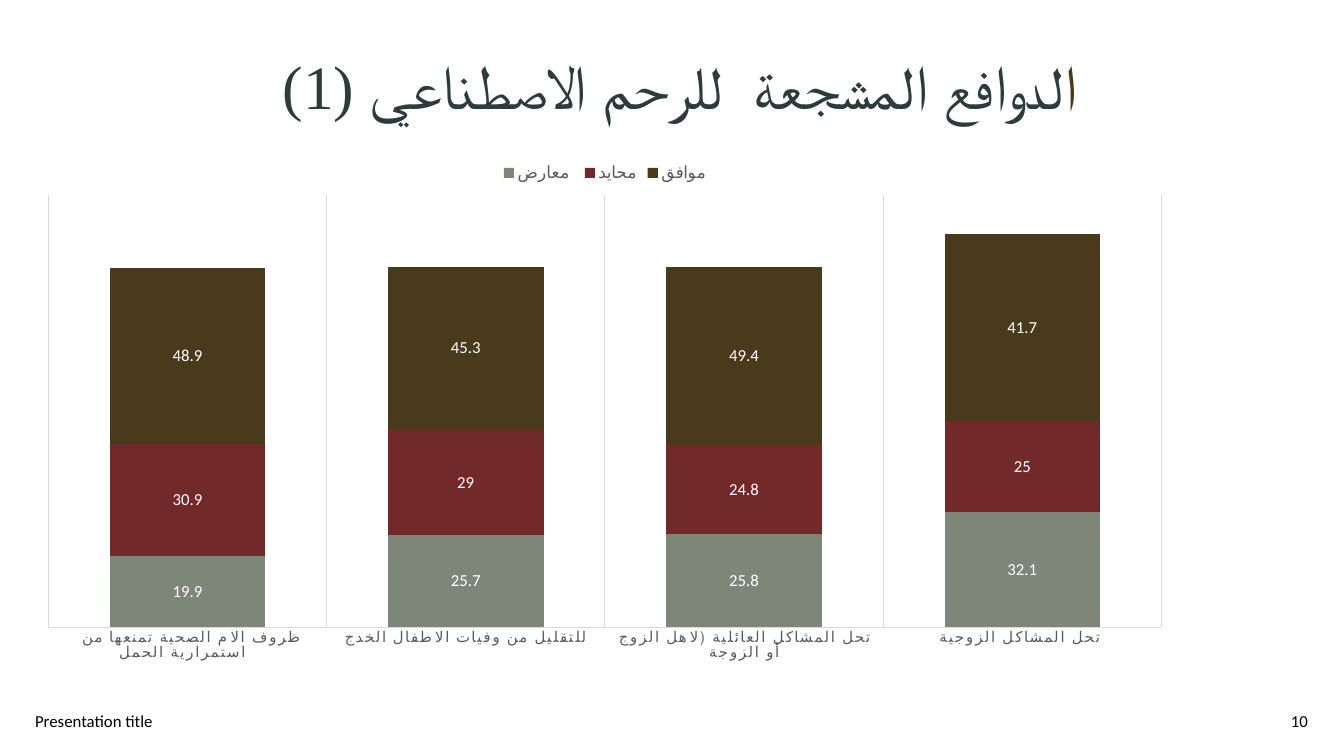
from dataclasses import dataclass

from lxml.etree import SubElement
from pptx import Presentation
from pptx.chart.chart import Chart
from pptx.chart.data import CategoryChartData
from pptx.dml.color import RGBColor
from pptx.enum.chart import XL_CHART_TYPE as ChartType
from pptx.enum.chart import XL_LABEL_POSITION as LabelPosition
from pptx.enum.chart import XL_LEGEND_POSITION as LegendPosition
from pptx.enum.chart import XL_TICK_LABEL_POSITION as TickLabels
from pptx.enum.chart import XL_TICK_MARK as TickMark
from pptx.enum.text import MSO_ANCHOR as Anchor
from pptx.enum.text import PP_ALIGN as Align
from pptx.oxml.ns import qn
from pptx.slide import Slide
from pptx.text.text import Font
from pptx.util import Inches, Pt

COLORS = {
    "brown": "4A3A1C",
    "red": "72292A",
    "sage": "7E8679",
    "title": "2C3C3A",
    "label": "595959",
    "grid": "D9D9D9",
    "black": "000000",
    "white": "FFFFFF",
}


@dataclass
class Answer:
    name: str
    values: tuple[float, ...]
    color: str
    shown: dict[int, str]  # label wording that differs from the value


@dataclass
class Note:
    text: str
    left: float
    width: float
    align: Align


MOTIVES = (
    " ظروف الام الصحية تمنعها من استمرارية الحمل  ",
    "للتقليل من وفيات الاطفال الخدج",
    "تحل المشاكل العائلية (لاهل الزوج أو الزوجة",
    "تحل المشاكل الزوجية ",
)
ANSWERS = (
    Answer("معارض ", (19.9, 25.7, 25.8, 32.1), "sage", {}),
    Answer("محايد", (30.9, 29.1, 24.8, 25), "red", {1: "29"}),
    Answer("موافق", (48.9, 45.3, 49.4, 52), "brown", {3: "41.7"}),
)
TITLE_PARTS = (("ا", "brown"), ("لدوافع المشجعة  للرحم الاصطناعي (1) ", "title"))
NOTES = (
    Note("Presentation title", 0.25, 4.5, Align.LEFT),
    Note("10", 10.07, 3, Align.RIGHT),
)
PLOT_AREA = {"x": 0.02, "y": 0.08, "w": 0.96, "h": 0.83}


def style_font(font: Font, size: float, color: str, name: str = "Calibri") -> None:
    for key, value in {"size": Pt(size), "name": name, "bold": False}.items():
        setattr(font, key, value)
    font.color.rgb = RGBColor.from_string(COLORS[color])


def fill_title(slide: Slide) -> None:
    title = slide.shapes.title
    place = {"left": 0.92, "top": 0.42, "width": 11.5, "height": 0.94}
    for key, value in place.items():
        setattr(title, key, Inches(value))
    title.text_frame.vertical_anchor = Anchor.MIDDLE
    para = title.text_frame.paragraphs[0]
    para.alignment = Align.CENTER
    para.line_spacing = 0.9
    para._p.get_or_add_pPr().set("rtl", "1")
    for text, color in TITLE_PARTS:
        span = para.add_run()
        span.text = text
        style_font(span.font, 44, color, "Times New Roman")
        complex_font = SubElement(span.font._element, qn("a:cs"))
        complex_font.set("typeface", "Times New Roman")


def add_note(slide: Slide, note: Note) -> None:
    box = slide.shapes.add_textbox(
        Inches(note.left), Inches(6.95), Inches(note.width), Inches(0.4)
    )
    box.text_frame.word_wrap = True
    box.text_frame.vertical_anchor = Anchor.MIDDLE
    para = box.text_frame.paragraphs[0]
    para.alignment = note.align
    span = para.add_run()
    span.text = note.text
    style_font(span.font, 12, "black")


def fix_plot_area(chart: Chart) -> None:
    """Pin the inner plot area to fractions of the chart frame."""
    plot_area = chart._chartSpace.chart.plotArea
    for old in plot_area.findall(qn("c:layout")):
        plot_area.remove(old)
    layout = SubElement(plot_area, qn("c:layout"))
    plot_area.insert(0, layout)
    manual = SubElement(layout, qn("c:manualLayout"))
    settings = {"layoutTarget": "inner", "xMode": "edge", "yMode": "edge"} | PLOT_AREA
    for tag, value in settings.items():
        SubElement(manual, qn(f"c:{tag}")).set("val", str(value))


def format_axes(chart: Chart) -> None:
    values = chart.value_axis
    for key, value in {
        "minimum_scale": 0,
        "maximum_scale": 120,
        "has_major_gridlines": False,
        "visible": False,
    }.items():
        setattr(values, key, value)

    motives = chart.category_axis
    for key, value in {
        "major_tick_mark": TickMark.NONE,
        "minor_tick_mark": TickMark.NONE,
        "tick_label_position": TickLabels.NEXT_TO_AXIS,
        "has_major_gridlines": True,
    }.items():
        setattr(motives, key, value)
    for line in (motives.format.line, motives.major_gridlines.format.line):
        line.width = Pt(0.75)
        line.color.rgb = RGBColor.from_string(COLORS["grid"])
    font = motives.tick_labels.font
    style_font(font, 10.6, "label")
    font._element.set("spc", "120")


def format_answers(chart: Chart) -> None:
    for series, answer in zip(chart.plots[0].series, ANSWERS):
        series.format.fill.solid()
        series.format.fill.fore_color.rgb = RGBColor.from_string(COLORS[answer.color])
        labels = series.data_labels
        labels.show_value = True
        labels.position = LabelPosition.CENTER
        style_font(labels.font, 12, "white")
        for index, text in answer.shown.items():
            label = series.points[index].data_label
            span = label.text_frame.paragraphs[0].add_run()
            span.text = text
            style_font(span.font, 12, "white")
            label.position = LabelPosition.CENTER


def add_answer_chart(slide: Slide) -> None:
    data = CategoryChartData()
    data.categories = MOTIVES
    for answer in ANSWERS:
        data.add_series(answer.name, answer.values)
    chart = slide.shapes.add_chart(
        ChartType.COLUMN_STACKED,
        Inches(0.25), Inches(1.52), Inches(11.5), Inches(5.17),
        data,
    ).chart
    style_font(chart.font, 10, "black")
    chart.has_title = False
    chart.has_legend = True
    chart.legend.position = LegendPosition.TOP
    chart.legend.include_in_layout = False
    style_font(chart.legend.font, 12, "label")
    plot = chart.plots[0]
    for key, value in {"gap_width": 79, "overlap": 100, "vary_by_categories": False}.items():
        setattr(plot, key, value)
    format_axes(chart)
    format_answers(chart)
    fix_plot_area(chart)


def main() -> None:
    deck = Presentation()
    deck.slide_width, deck.slide_height = Inches(13.33), Inches(7.5)
    page = deck.slides.add_slide(deck.slide_layouts[5])
    fill_title(page)
    for note in NOTES:
        add_note(page, note)
    add_answer_chart(page)
    deck.save("out.pptx")


if __name__ == "__main__":
    main()
